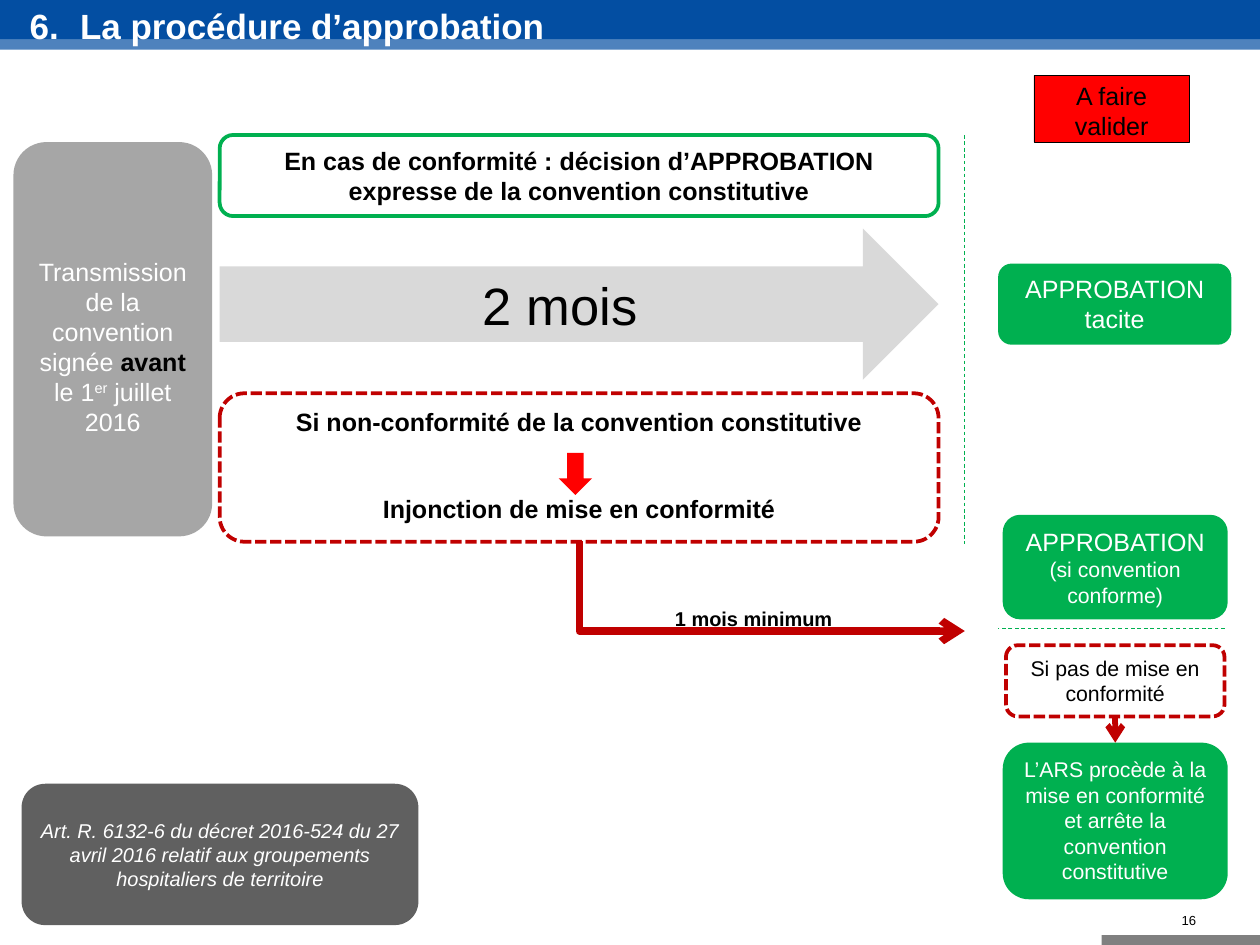
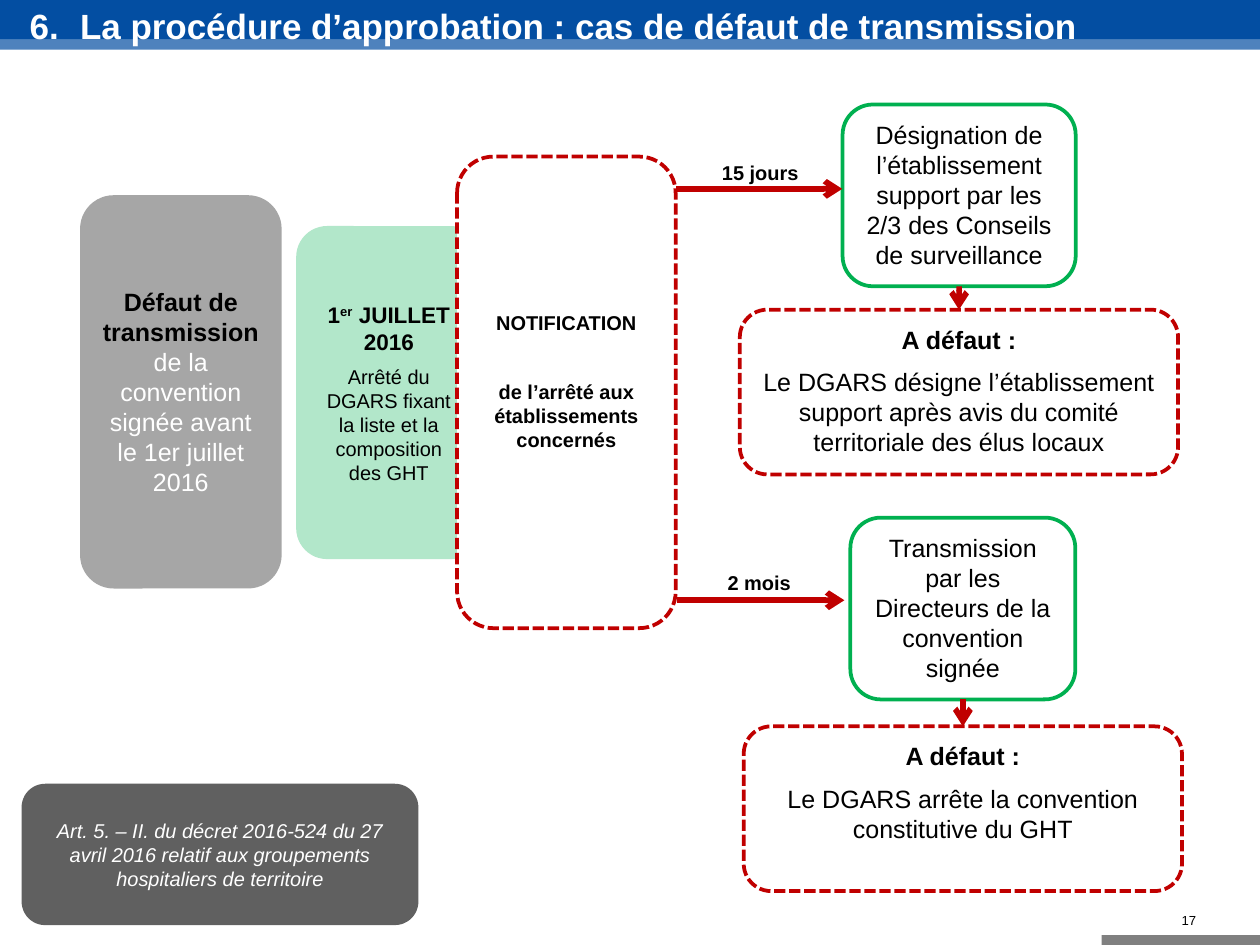
"""Build two slides on the approval procedure and the case of missing transmission."""
from dataclasses import dataclass

from pptx import Presentation
from pptx.dml.color import RGBColor
from pptx.enum.dml import MSO_LINE
from pptx.enum.shapes import MSO_CONNECTOR, MSO_SHAPE
from pptx.enum.text import MSO_ANCHOR, PP_ALIGN
from pptx.oxml.ns import qn
from pptx.oxml.xmlchemy import OxmlElement
from pptx.util import Cm, Pt

FIRST_NUMBER = 16
DECREE = "du décret 2016-524 du 27 avril 2016 relatif aux groupements hospitaliers de territoire"
STRONG = {"bold": True}
BLACK_BOLD = {"bold": True, "color": "black"}
SUPERSCRIPT = {"baseline": "30000"}

PAGES = [
    {
        "title": "La procédure d’approbation",
        "source": f"Art. R. 6132-6 {DECREE}",
        "boxes": [
            ("duration", "duration_arrow", (6.2, 6.45, 20.29, 4.27), [["2 mois"]], {}),
            ("transmission", "start", (0.38, 4.01, 5.61, 11.13),
             [["Transmission de la convention signée ", ("avant ", BLACK_BOLD), "le 1",
               ("er", SUPERSCRIPT), " juillet 2016"]],
             {"insets": (0.36, 0.58, 0.36, 0.18)}),
            ("non_conformity", "warning", (6.2, 11.1, 20.29, 4.19),
             [["Si non-conformité de la convention constitutive"],
              ["Injonction de mise en conformité"]], {"bold": True, "gap": 45}),
            ("injunction_arrow", "red_arrow", (15.77, 12.78, 0.94, 1.19), [], {}),
            ("no_compliance", "warning", (28.39, 18.21, 6.17, 2.01),
             [["Si pas de mise en conformité"]], {"size": "detail"}),
            ("tacit_approval", "approval", (28.17, 7.44, 6.58, 2.29),
             [["APPROBATION"], ["tacite"]], {}),
            ("express_approval", "outcome", (6.2, 3.81, 20.29, 2.29),
             [["En cas de conformité : décision d’APPROBATION "
               "expresse de la convention constitutive"]], {"bold": True}),
            ("delay", "label", (17.98, 16.94, 6.58, 1.04), [["1 mois minimum"]], {}),
            ("agency_action", "approval", (28.3, 20.96, 6.35, 4.42),
             [["L’ARS procède à la mise en conformité et arrête la convention constitutive"]],
             {"size": "detail"}),
            ("conditional_approval", "approval", (28.3, 14.53, 6.35, 2.95),
             [["APPROBATION"], [("(si convention conforme)", {"size": "detail"})]], {}),
            ("to_validate", "flag", (29.18, 2.13, 4.39, 1.88), [["A faire valider"]], {}),
        ],
        "links": [("no_compliance", "agency_action")],
        "arrows": [],
        "elbows": [((16.35, 15.28), (27.23, 17.81))],
        "separators": [((27.23, 3.81), (27.23, 15.34)), ((34.57, 17.73), (28.17, 17.73))],
    },
    {
        "title": "La procédure d’approbation : cas de défaut de transmission",
        "source": f"Art. 5. – II. {DECREE}",
        "boxes": [
            ("first_delay", "label", (19.08, 4.34, 4.75, 1.04), [["15 jours"]], {}),
            ("order", "order", (8.36, 6.38, 5.23, 9.4),
             [[("1", {"bold": True, "size": "date"}),
               ("er", {"bold": True, "size": "date", **SUPERSCRIPT}),
               (" JUILLET 2016", {"bold": True, "size": "date"})],
              ["Arrêté du DGARS fixant la liste et la composition des GHT"]], {}),
            ("missing_transmission", "start", (2.26, 5.51, 5.69, 11.1),
             [[("Défaut de transmission ", BLACK_BOLD),
               "de la convention signée avant le 1er juillet 2016"]], {}),
            ("agency_designation", "warning", (20.88, 8.74, 12.37, 4.65),
             [[("A défaut :", STRONG)],
              ["Le DGARS désigne l’établissement support après avis du comité "
               "territoriale des élus locaux"]], {"gap": 10}),
            ("designation", "outcome", (23.78, 2.95, 6.58, 5.13),
             [["Désignation de l’établissement support par les 2/3 des Conseils "
               "de surveillance"]], {}),
            ("late_transmission", "outcome", (24, 14.61, 6.35, 5.13),
             [["Transmission par les Directeurs de la convention signée"]], {}),
            ("agency_order", "warning", (20.99, 20.5, 12.37, 4.65),
             [[("A défaut :", STRONG)],
              ["Le DGARS arrête la convention constitutive du GHT"]], {"gap": 10}),
            ("notification", "warning", (12.9, 4.42, 6.17, 13.31),
             [["NOTIFICATION"], ["de l’arrêté aux établissements concernés"]],
             {"fill": "white", "size": "small", "bold": True, "gap": 36,
              "insets": (0.36, 4.05, 0.36, 0.18)}),
            ("second_delay", "label", (19.05, 15.93, 4.75, 1.04), [["2 mois"]], {}),
        ],
        "links": [("designation", "agency_designation"), ("late_transmission", "agency_order")],
        "arrows": [((19.08, 5.33), (23.77, 5.33)), ((19.1, 16.94), (23.83, 16.94))],
        "elbows": [],
        "separators": [],
    },
]


@dataclass(frozen=True)
class Theme:
    """Hold the colours, the font and the type sizes."""
    font: str = "Arial"
    blue: str = "034EA2"
    footer_gray: str = "808080"
    gray: str = "A6A6A6"
    dark_gray: str = "606060"
    green: str = "00B050"
    crimson: str = "C00000"
    red: str = "FF0000"
    white: str = "FFFFFF"
    black: str = "000000"
    giant: float = 42
    title: float = 28
    body: float = 20
    date: float = 18
    detail: float = 17
    small: float = 16
    number: float = 10.5


THEME = Theme()
ROUNDED = MSO_SHAPE.ROUNDED_RECTANGLE
RECTANGLE = MSO_SHAPE.RECTANGLE
MIDDLE = MSO_ANCHOR.MIDDLE
TIGHT = (0.25, 0.13, 0.25, 0.13)

STYLES = {
    "band": {"kind": RECTANGLE, "fill": "blue"},
    "duration_arrow": {"kind": MSO_SHAPE.RIGHT_ARROW, "fill": "gray", "alpha": 42,
                       "size": "giant"},
    "start": {"kind": ROUNDED, "fill": "gray", "color": "white", "anchor": MIDDLE},
    "warning": {"kind": ROUNDED, "line": "crimson", "dash": MSO_LINE.SQUARE_DOT},
    "outcome": {"kind": ROUNDED, "line": "green"},
    "approval": {"kind": ROUNDED, "fill": "green", "color": "white"},
    "order": {"kind": ROUNDED, "fill": "green", "alpha": 30, "size": "small", "gap": 8,
              "anchor": MIDDLE},
    "source": {"kind": ROUNDED, "fill": "dark_gray", "color": "white", "size": "small",
               "italic": True, "anchor": MIDDLE, "insets": TIGHT},
    "flag": {"kind": RECTANGLE, "fill": "red", "line": "black", "line_width": 0.25,
             "insets": TIGHT},
    "red_arrow": {"kind": MSO_SHAPE.DOWN_ARROW, "fill": "red"},
    "label": {"size": "small", "bold": True, "anchor": MIDDLE},
    "title": {"size": "title", "color": "white", "bold": True, "anchor": MIDDLE,
              "align": PP_ALIGN.LEFT, "insets": (0, 0, 0, 0)},
    "number": {"size": "number", "anchor": MIDDLE, "align": PP_ALIGN.RIGHT,
               "insets": (0.1, 0, 0.1, 0)},
}


def color_of(name):
    return RGBColor.from_string(getattr(THEME, name))


def write_text(box, paragraphs, size="body", color="black", bold=False, italic=False,
               align=PP_ALIGN.CENTER, anchor=MSO_ANCHOR.TOP, gap=0,
               insets=(0.36, 0.18, 0.36, 0.18)):
    frame = box.text_frame
    frame.word_wrap = True
    frame.vertical_anchor = anchor
    frame.margin_left, frame.margin_top, frame.margin_right, frame.margin_bottom = map(Cm, insets)
    for index, spans in enumerate(paragraphs):
        para = frame.add_paragraph() if index else frame.paragraphs[0]
        para.alignment = align
        if index:
            para.space_before = Pt(gap)
        for item in spans:
            text, changes = (item, {}) if isinstance(item, str) else item
            span = para.add_run()
            span.text = text
            font = span.font
            font.name = THEME.font
            font.size = Pt(getattr(THEME, changes.get("size", size)))
            font.bold = changes.get("bold", bold)
            font.italic = italic
            font.color.rgb = color_of(changes.get("color", color))
            if "baseline" in changes:
                span._r.get_or_add_rPr().set("baseline", changes["baseline"])


def add_box(page, style, place, paragraphs=(), **changes):
    look = {**STYLES[style], **changes}
    kind, fill, line = (look.pop(key, None) for key in ("kind", "fill", "line"))
    alpha, dash = look.pop("alpha", None), look.pop("dash", None)
    line_width = look.pop("line_width", 3)
    lengths = [Cm(value) for value in place]
    if kind is None:
        box = page.shapes.add_textbox(*lengths)
    else:
        box = page.shapes.add_shape(kind, *lengths)
        box.shadow.inherit = False
    if fill:
        box.fill.solid()
        box.fill.fore_color.rgb = color_of(fill)
    else:
        box.fill.background()
    if alpha:
        opacity = OxmlElement("a:alpha")
        opacity.set("val", str(alpha * 1000))
        box._element.spPr.find(qn("a:solidFill"))[0].append(opacity)
    if line:
        box.line.color.rgb = color_of(line)
        box.line.width = Pt(line_width)
        if dash:
            box.line.dash_style = dash
    else:
        box.line.fill.background()
    if paragraphs:
        write_text(box, paragraphs, **look)
    return box


def add_line(page, start, end, color="crimson", width=4.5, dash=None, arrow=True,
             kind=MSO_CONNECTOR.STRAIGHT):
    line = page.shapes.add_connector(kind, *map(Cm, (*start, *end)))
    line.line.color.rgb = color_of(color)
    line.line.width = Pt(width)
    if dash:
        line.line.dash_style = dash
    if arrow:
        head = OxmlElement("a:tailEnd")
        head.set("type", "arrow")
        line._element.spPr.find(qn("a:ln")).append(head)
    line._element.spPr.append(OxmlElement("a:effectLst"))
    return line


def add_elbow(page, start, end):
    center_x, center_y = (start[0] + end[0]) / 2, (start[1] + end[1]) / 2
    half_width, half_height = (end[1] - start[1]) / 2, (end[0] - start[0]) / 2
    elbow = add_line(page, (center_x + half_width, center_y - half_height),
                     (center_x - half_width, center_y + half_height),
                     width=6, kind=MSO_CONNECTOR.ELBOW)
    properties = elbow._element.spPr
    properties.find(qn("a:prstGeom")).set("prst", "bentConnector2")
    properties.find(qn("a:xfrm")).set("rot", "16200000")


def add_title(page, text):
    title = add_box(page, "title", (0.84, 0.13, 34.04, 1.17), [[text]])
    properties = title.text_frame.paragraphs[0]._p.get_or_add_pPr()
    properties.set("marL", str(int(Cm(1.42))))
    properties.set("indent", str(-int(Cm(1.42))))
    numbering = OxmlElement("a:buAutoNum")
    numbering.set("type", "arabicPeriod")
    numbering.set("startAt", "6")
    properties.append(numbering)


def add_number(page, number):
    box = add_box(page, "number", (29.39, 25.73, 4.47, 0.46), [[str(number)]])
    span = box.text_frame.paragraphs[0].runs[0]._r
    field = OxmlElement("a:fld")
    field.set("id", "{B6F15528-21DE-4FAA-801E-634DDDAF4B2B}")
    field.set("type", "slidenum")
    span.addprevious(field)
    for part in list(span):
        field.append(part)
    span.getparent().remove(span)


def add_frame(page, number):
    add_number(page, number)
    add_box(page, "band", (0, 1.12, 35.56, 0.28), alpha=70)
    add_box(page, "band", (0, 0, 35.56, 1.12))
    add_box(page, "band", (31.09, 26.39, 4.47, 0.28), fill="footer_gray")


def build_page(deck, content, number):
    page = deck.slides.add_slide(deck.slide_layouts[6])
    add_frame(page, number)
    boxes = {name: add_box(page, style, place, paragraphs, **changes)
             for name, style, place, paragraphs, changes in content["boxes"]}
    for start, end in content["separators"]:
        add_line(page, start, end, color="green", width=0.75, dash=MSO_LINE.DASH, arrow=False)
    for upper, lower in content["links"]:
        link = add_line(page, (0, 0), (0, 0))
        link.begin_connect(boxes[upper], 2)
        link.end_connect(boxes[lower], 0)
    for start, end in content["arrows"]:
        add_line(page, start, end)
    for start, end in content["elbows"]:
        add_elbow(page, start, end)
    add_box(page, "source", (0.61, 22.12, 11.2, 3.99), [[content["source"]]])
    add_title(page, content["title"])


def main():
    deck = Presentation()
    deck.slide_width, deck.slide_height = Cm(35.56), Cm(26.67)
    deck.element.set("firstSlideNum", str(FIRST_NUMBER))
    for number, content in enumerate(PAGES, FIRST_NUMBER):
        build_page(deck, content, number)
    deck.save("out.pptx")


if __name__ == "__main__":
    main()
